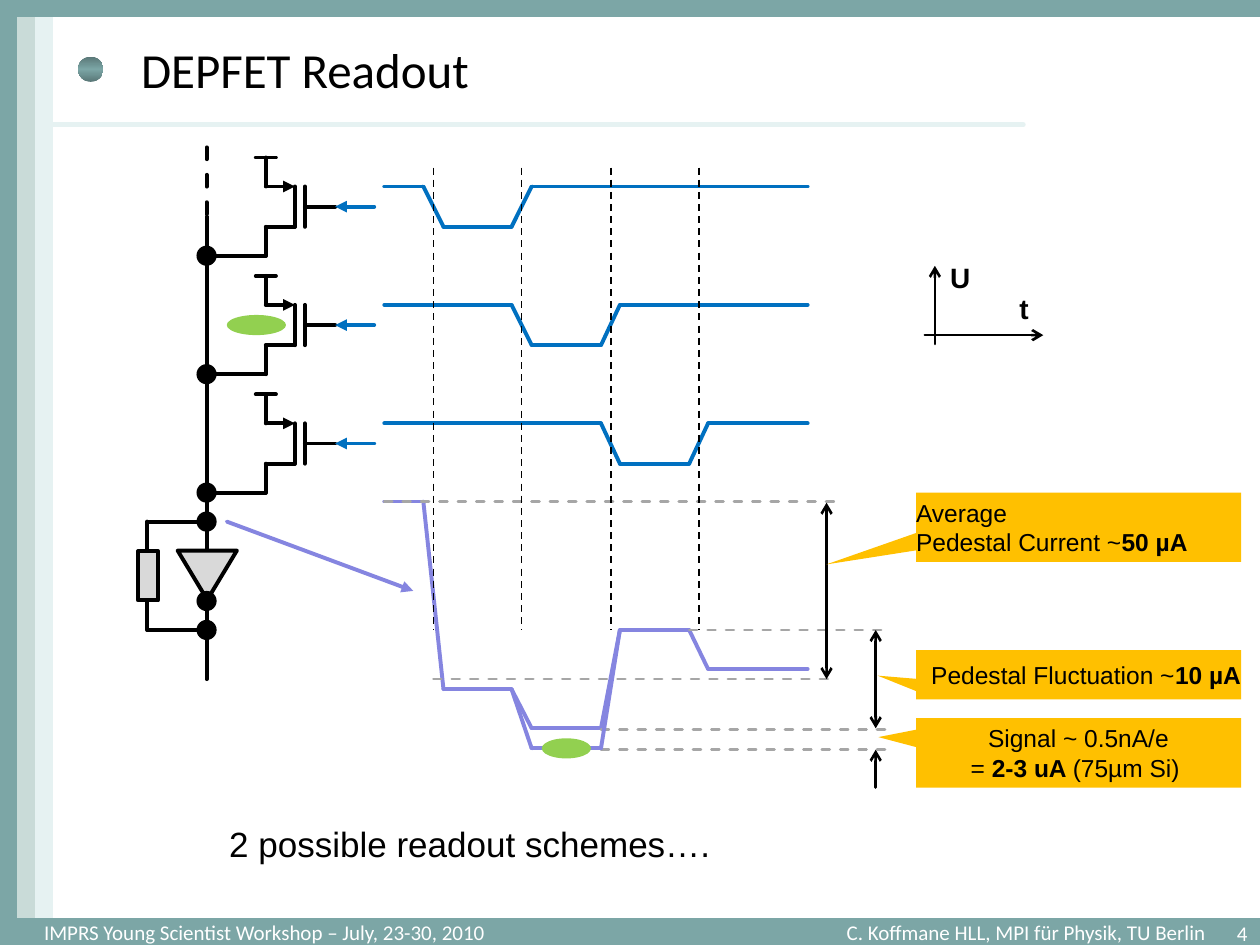
from dataclasses import dataclass

from lxml import etree
from pptx import Presentation
from pptx import util as u
from pptx.dml.color import RGBColor
from pptx.enum import dml, shapes, text
from pptx.oxml import ns

Inches = u.Inches
SHAPE = shapes.MSO_SHAPE
LEFT, CENTER, RIGHT = text.PP_ALIGN.LEFT, text.PP_ALIGN.CENTER, text.PP_ALIGN.RIGHT


@dataclass(frozen=True)
class Theme:
    teal: str = "7CA6A6"
    teal_dark: str = "597777"
    teal_pale: str = "C9DBD8"
    teal_mist: str = "E6F2F2"
    black: str = "000000"
    white: str = "FFFFFF"
    gate: str = "0070C0"
    drain: str = "8585E0"
    guide: str = "A6A6A6"
    device: str = "D9D9D9"
    charge: str = "92D050"
    callout: str = "FFC000"
    heading: str = "Calibri"
    body: str = "Arial"
    title_size: int = 28
    body_size: int = 20
    axis_size: int = 16
    note_size: int = 14
    footer_size: int = 12
    thick: float = 2.25
    medium: float = 1.5


T = Theme()
# Start and end of each switching edge on the time axis
EDGES = [(3.36, 3.52), (4.06, 4.22), (4.77, 4.92), (5.47, 5.62)]
ROWS = [1.48, 2.42, 3.36]
START, END = 3.05, 6.41
BUS = 1.64


def rgb(value):
    return RGBColor.from_string(value)


def write(tf, paragraphs, size=T.note_size, font=T.body, color=T.black, align=LEFT,
          bold=False, margins=(0, 0, 0, 0), wrap=True, anchor=text.MSO_ANCHOR.MIDDLE):
    """Fill a frame; each paragraph is a list of (text, bold) runs or a string."""
    tf.auto_size = text.MSO_AUTO_SIZE.NONE
    tf.word_wrap, tf.vertical_anchor = wrap, anchor
    tf.margin_left, tf.margin_top, tf.margin_right, tf.margin_bottom = map(Inches, margins)
    for i, runs in enumerate(paragraphs):
        p = tf.paragraphs[0] if i == 0 else tf.add_paragraph()
        p.alignment = align
        for words, strong in [(runs, bold)] if isinstance(runs, str) else runs:
            r = p.add_run()
            r.text = words
            r.font.size, r.font.name, r.font.bold = u.Pt(size), font, strong
            r.font.color.rgb = rgb(color)


def label(s, box, words, **fmt):
    sp = s.shapes.add_textbox(*map(Inches, box))
    write(sp.text_frame, [words], **fmt)


def shape(s, kind, box, fill, line=None, width=T.thick, rotation=0):
    sp = s.shapes.add_shape(kind, *map(Inches, box))
    sp.shadow.inherit = False
    sp.rotation = rotation
    sp.fill.solid()
    sp.fill.fore_color.rgb = rgb(fill)
    if line:
        sp.line.color.rgb, sp.line.width = rgb(line), u.Pt(width)
    else:
        sp.line.fill.background()
    return sp


def wire(s, *points, color=T.black, width=T.thick, dash=False, head=None, tail=None):
    """Join the points with straight connectors."""
    for a, b in zip(points, points[1:]):
        c = s.shapes.add_connector(shapes.MSO_CONNECTOR.STRAIGHT, *map(Inches, (*a, *b)))
        c.line.color.rgb, c.line.width = rgb(color), u.Pt(width)
        if dash:
            c.line.dash_style = dml.MSO_LINE.DASH
        spPr = c._element.spPr
        ln = spPr.find(ns.qn("a:ln"))
        if width > 1:
            ln.set("cap", "rnd")
        for tag, end in (("a:headEnd", head), ("a:tailEnd", tail)):
            if end:
                etree.SubElement(ln, ns.qn(tag), type=end)
        etree.SubElement(spPr, ns.qn("a:effectLst"))


def node(s, y):
    shape(s, SHAPE.OVAL, (BUS - 0.08, y - 0.08, 0.16, 0.16), T.black)


def callout(s, top, height, tip, paragraphs, align):
    sp = shape(s, SHAPE.RECTANGULAR_CALLOUT, (7.27, top, 2.58, height), T.callout)
    sp.adjustments[0], sp.adjustments[1] = tip
    write(sp.text_frame, paragraphs, align=align, wrap=False)


def frame(s):
    for box, color in [((0.13, 0, 0.15, 7.29), T.teal_pale), ((0.28, 0, 0.14, 7.5), T.teal_mist),
                       ((0, 7.29, 10, 0.24), T.teal), ((0, 0, 0.13, 7.29), T.teal),
                       ((0, -0.03, 10, 0.16), T.teal)]:
        shape(s, SHAPE.RECTANGLE, box, color, line=color, width=0.75)
    wire(s, (0.32, 0.99), (8.12, 0.99), color=T.teal_mist, width=3)
    # Title bullet
    ball = shape(s, SHAPE.OVAL, (0.62, 0.45, 0.2, 0.2), T.teal)
    ball.fill.gradient()
    ball.fill.gradient_angle = 90
    stops = ball._element.spPr.find(".//" + ns.qn("a:gsLst"))
    for stop in list(stops):
        stops.remove(stop)
    for pos, color in ((0, T.teal_dark), (50000, T.teal), (100000, T.teal_dark)):
        gs = etree.SubElement(stops, ns.qn("a:gs"), pos=str(pos))
        etree.SubElement(gs, ns.qn("a:srgbClr"), val=color)
    # Title and footer
    title = s.shapes.title
    title.left, title.top, title.width, title.height = map(Inches, (0.42, 0.21, 8.5, 0.67))
    write(title.text_frame, ["DEPFET Readout"], size=T.title_size, font=T.heading,
          margins=(0.7, 0.05, 0.1, 0.05))
    footer = dict(size=T.footer_size, font=T.heading, color=T.white)
    label(s, (0.35, 7.3, 4.5, 0.2), "IMPRS Young Scientist Workshop – July, 23-30, 2010", **footer)
    label(s, (5.07, 7.3, 4.5, 0.2), "C. Koffmane HLL, MPI für Physik, TU Berlin",
          align=RIGHT, **footer)
    label(s, (9, 7.26, 1, 0.24), "4", align=RIGHT, margins=(0.1, 0.05, 0.1, 0.05),
          anchor=text.MSO_ANCHOR.TOP, **footer)


def pixel(s, y):
    """One transistor whose source sits at height y, tied to the bus."""
    low, drain = y + 0.32, y + 0.55
    wire(s, (2.03, y - 0.23), (2.19, y - 0.23))
    wire(s, (2.11, y - 0.23), (2.11, y))
    wire(s, (2.11, y), (2.34, y), tail="triangle")
    wire(s, (2.34, y), (2.34, low), (2.11, low), (2.11, drain), (1.72, drain))
    wire(s, (2.42, y), (2.42, low))
    wire(s, (2.42, y + 0.16), (2.66, y + 0.16))
    wire(s, (2.66, y + 0.16), (2.97, y + 0.16), color=T.gate, head="triangle")
    node(s, drain)


def gate_pulse(s, y, fall, rise):
    low = y + 0.32
    wire(s, (START, y), (fall[0], y), (fall[1], low), (rise[0], low), (rise[1], y), (END, y),
         color=T.gate)


def amplifier(s):
    wire(s, (BUS, 3.98), (BUS, 5.39))
    wire(s, (BUS, 4.14), (1.17, 4.14), (1.17, 4.38))
    wire(s, (1.17, 4.77), (1.17, 5), (BUS, 5))
    shape(s, SHAPE.ISOSCELES_TRIANGLE, (1.41, 4.37, 0.47, 0.39), T.device, T.black, rotation=180)
    shape(s, SHAPE.RECTANGLE, (0.98, 4.49, 0.39, 0.16), T.device, T.black, rotation=90)
    for y in (4.14, 4.77, 5):
        node(s, y)


def drain_current(s):
    e1, e2, e3, e4 = EDGES
    wire(s, (START, 3.98), (e1[0], 3.98), (e1[1], 5.47), (e2[0], 5.47), (e2[1], 5.78),
         (e3[0], 5.78), (e3[1], 5), (e4[0], 5), (e4[1], 5.31), (END, 5.31), color=T.drain)
    wire(s, (3.28, 4.69), (1.8, 4.14), color=T.drain, head="triangle")
    # Reference levels
    for x1, x2, y in [(START, 6.64, 3.98), (3.44, 6.64, 5.39), (5.47, 7.03, 5),
                      (4.77, 7.03, 5.79), (4.77, 7.03, 5.95)]:
        wire(s, (x1, y), (x2, y), color=T.guide, width=T.medium, dash=True)
    # Extra signal from the collected charge
    wire(s, (e2[0], 5.47), (e2[1], 5.94), (e3[0], 5.94), (e3[1], 5), color=T.drain)
    shape(s, SHAPE.OVAL, (4.3, 5.86, 0.39, 0.16), T.charge)


def measures(s):
    for x, y1, y2, head in [(6.56, 3.99, 5.39, "arrow"), (6.95, 5, 5.78, "arrow"),
                            (6.95, 6.25, 5.95, None)]:
        wire(s, (x, y1), (x, y2), width=T.medium, head=head, tail="arrow")
    callout(s, 3.91, 0.55, (-0.776, 0.536),
            ["Average", [("Pedestal Current ~", False), ("50 µA", True)]], LEFT)
    callout(s, 5.16, 0.39, (-0.618, 0.019),
            [[("Pedestal Fluctuation ~", False), ("10 µA", True)]], RIGHT)
    callout(s, 5.7, 0.55, (-0.616, -0.227),
            ["Signal ~ 0.5nA/e", [("= ", False), ("2-3 uA ", True), ("(75µm Si) ", False)]],
            CENTER)


def axes(s):
    wire(s, (7.42, 2.73), (7.42, 2.11), width=T.medium, tail="arrow")
    wire(s, (7.34, 2.66), (8.28, 2.66), width=T.medium, tail="arrow")
    for name, x, y in (("U", 7.5, 2.03), ("t", 8.05, 2.27)):
        label(s, (x, y, 0.23, 0.31), name, size=T.axis_size, bold=True, wrap=False,
              margins=(0.04,) * 4, anchor=text.MSO_ANCHOR.TOP)


def main():
    prs = Presentation()
    prs.slide_width, prs.slide_height = Inches(10), Inches(7.5)
    s = prs.slides.add_slide(prs.slide_layouts[5])
    frame(s)
    # Pixel column with its readout bus
    wire(s, (BUS, 1.17), (BUS, 1.72), dash=True)
    wire(s, (BUS, 1.72), (BUS, 4.38))
    for i, y in enumerate(ROWS):
        pixel(s, y)
        gate_pulse(s, y, EDGES[i], EDGES[i + 1])
    shape(s, SHAPE.OVAL, (1.8, 2.5, 0.47, 0.16), T.charge)
    amplifier(s)
    # Timing diagram
    drain_current(s)
    for x in (3.44, 4.14, 4.85, 5.55):
        wire(s, (x, 1.33), (x, 5), width=1, dash=True)
    measures(s)
    axes(s)
    label(s, (1.72, 6.48, 8.12, 0.47), "2 possible readout schemes….", size=T.body_size,
          margins=(0.1, 0.05, 0.1, 0.05), anchor=text.MSO_ANCHOR.TOP)
    prs.save("out.pptx")


if __name__ == "__main__":
    main()
